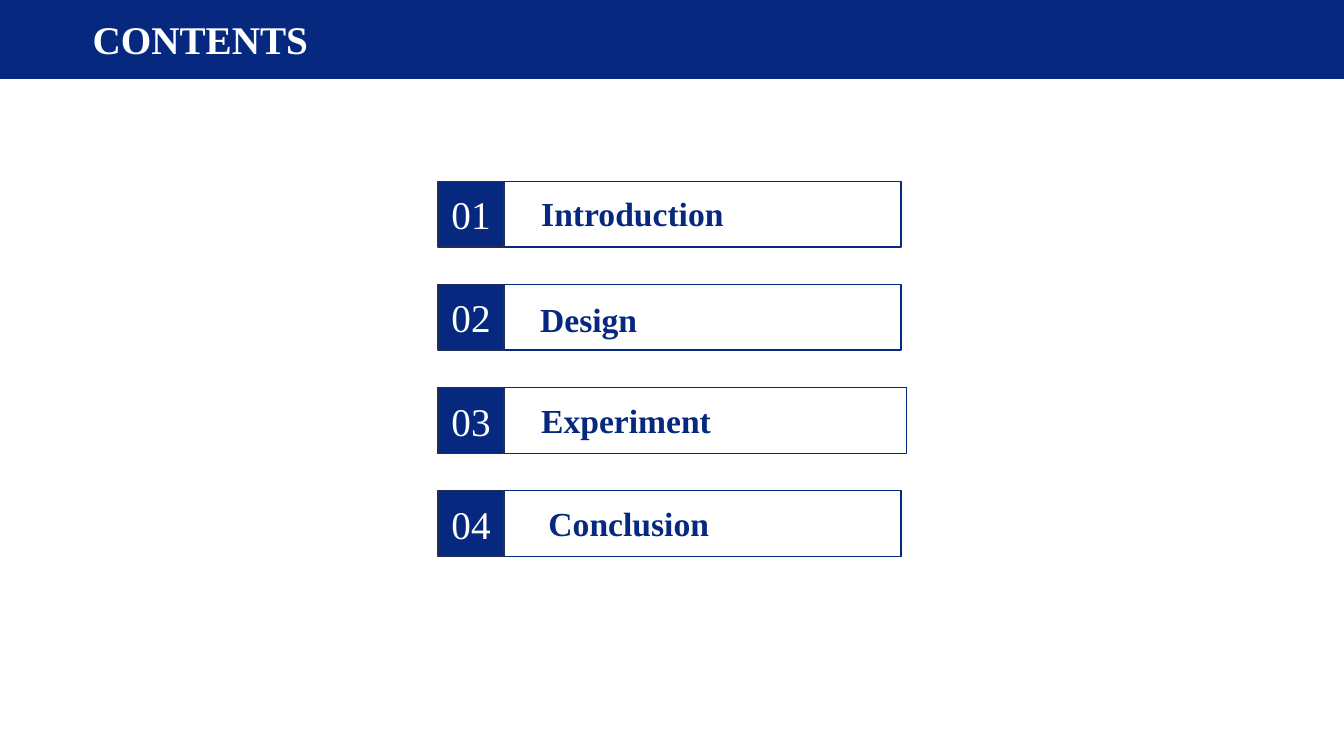
from pptx import Presentation
from pptx.dml.color import RGBColor
from pptx.enum.shapes import MSO_SHAPE as Preset
from pptx.enum.text import MSO_ANCHOR as Anchor, MSO_AUTO_SIZE as AutoSize, PP_ALIGN as Align
from pptx.util import Pt

NAVY, EDGE, WHITE = "06287F", "222D58", "FFFFFF"


def color(value):
    return RGBColor.from_string(value)


class ContentsSlide:
    """Holds the typeface and the slide, and draws each kind of element."""

    def __init__(self, presentation, typeface):
        self.typeface = typeface
        self.slide = presentation.slides.add_slide(presentation.slide_layouts[5])

    def set_text(self, shape, text, size, ink, bold=False, align=Align.LEFT, anchor=Anchor.TOP):
        frame = shape.text_frame
        frame.text = text
        frame.vertical_anchor = anchor
        paragraph = frame.paragraphs[0]
        paragraph.alignment = align
        font = paragraph.runs[0].font
        font.name, font.size, font.bold = self.typeface, Pt(size), bold
        font.color.rgb = color(ink)

    def rectangle(self, left, top, width, height, fill=None, line=NAVY):
        shape = self.slide.shapes.add_shape(
            Preset.RECTANGLE, Pt(left), Pt(top), Pt(width), Pt(height))
        shape.shadow.inherit = False
        if fill:
            shape.fill.solid()
            shape.fill.fore_color.rgb = color(fill)
        else:
            shape.fill.background()
        shape.line.color.rgb = color(line)
        shape.line.width = Pt(1)
        return shape

    def title(self, text, left, top, width, height):
        title = self.slide.shapes.title
        title.left, title.top = Pt(left), Pt(top)
        title.width, title.height = Pt(width), Pt(height)
        self.set_text(title, text, 28, WHITE, bold=True)
        title.text_frame.auto_size = AutoSize.NONE

    def header(self, text, width, height):
        band = self.rectangle(0, 0, width, height, fill=NAVY)
        self.title(text, 59, 7.2, 186.5, 41)
        self.slide.shapes.title.element.addprevious(band.element)

    def number(self, text, left, top, side):
        square = self.rectangle(left, top, side, side, fill=NAVY, line=EDGE)
        self.set_text(square, text, 28, WHITE, align=Align.CENTER, anchor=Anchor.MIDDLE)

    def label(self, text, left, top, width):
        box = self.slide.shapes.add_textbox(Pt(left), Pt(top), Pt(width), Pt(36))
        box.text_frame.word_wrap = True
        self.set_text(box, text, 24, NAVY, bold=True)

    def entry(self, number, text, left, top, width, label_left, label_drop):
        side = 47
        self.rectangle(left, top, width, side)
        self.number(number, left, top, side)
        self.label(text, label_left, top + label_drop, 250)


def main():
    presentation = Presentation()
    presentation.slide_width, presentation.slide_height = Pt(960), Pt(540)
    contents = ContentsSlide(presentation, "Times New Roman")
    contents.header("CONTENTS", 960, 55.7)
    entries = [
        ("Introduction", 330.5, 379.5, 5),
        ("Design", 330.5, 378.7, 6.5),
        ("Experiment", 334.5, 379.5, 5),
        ("Conclusion", 330.5, 384.7, 5),
    ]
    for index, (text, width, label_left, label_drop) in enumerate(entries):
        top = 129.6 + index * 73.6
        contents.entry(f"{index + 1:02}", text, 313, top, width, label_left, label_drop)
    presentation.save("out.pptx")


if __name__ == "__main__":
    main()
